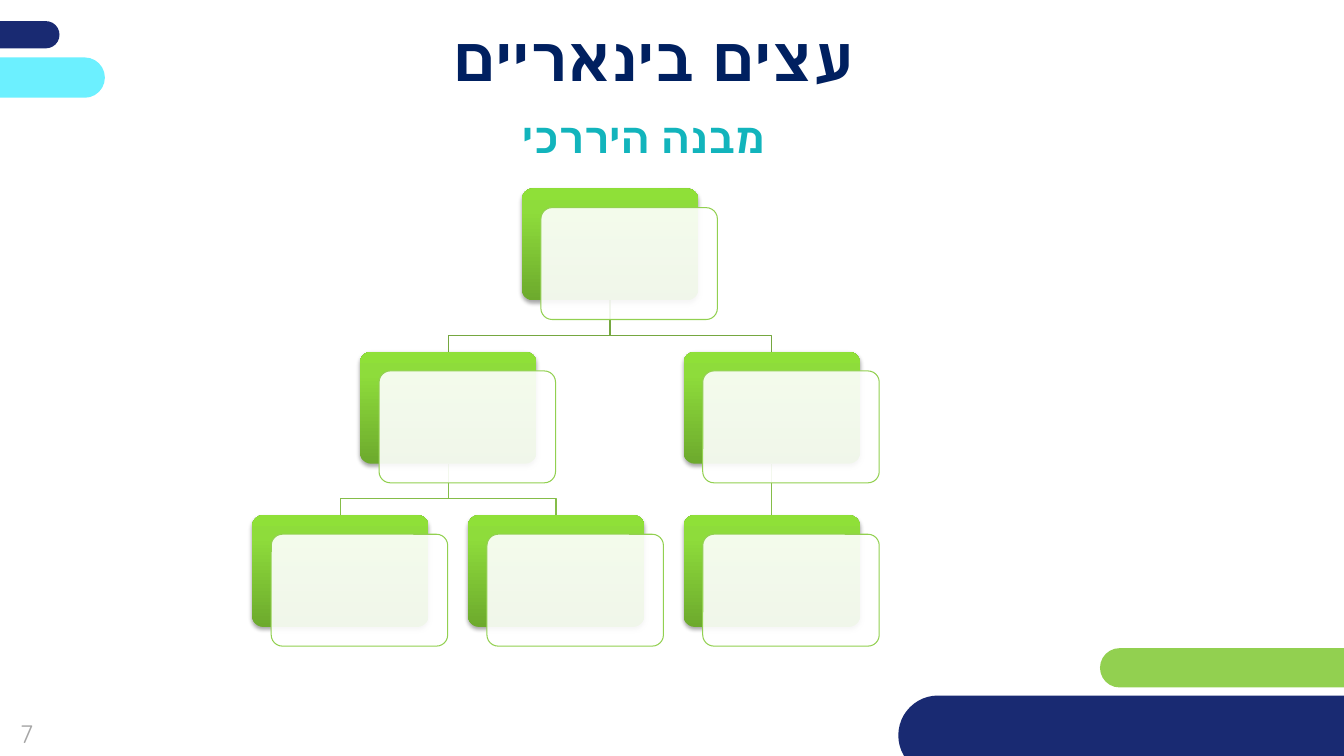
from copy import deepcopy

from lxml import etree
from pptx import Presentation, util as u
from pptx.dml.color import RGBColor
from pptx.enum import shapes, text
from pptx.oxml import ns

COLORS = {
    "navy": "192A72", "green": "92D050", "cyan": "6CF0FF", "white": "FFFFFF",
    "title": "002060", "subtitle": "12B4BC", "number": "A6A6A6",
    "root_link": "75A740", "child_link": "85BD49",
    "dark": "6DAA2D", "middle": "8EDC3B", "light": "8FE038",
}
COLORS = {name: RGBColor.from_string(value) for name, value in COLORS.items()}

deck = Presentation()
deck.slide_width, deck.slide_height = u.Inches(13.33), u.Inches(7.5)
page = deck.slides.add_slide(deck.slide_layouts[6])


def add_round_box(left, top, width, height, radius):
    box = page.shapes.add_shape(
        shapes.MSO_SHAPE.ROUNDED_RECTANGLE,
        u.Inches(left), u.Inches(top), u.Inches(width), u.Inches(height))
    box.adjustments[0] = radius
    box.shadow.inherit = False
    box.line.fill.background()
    return box


def add_label(words, left, top, width, height, size, color, bold):
    box = page.shapes.add_textbox(
        u.Inches(left), u.Inches(top), u.Inches(width), u.Inches(height))
    box.text_frame.word_wrap = True
    box.text_frame.vertical_anchor = text.MSO_ANCHOR.MIDDLE
    para = box.text_frame.paragraphs[0]
    para.text = words
    para.alignment = text.PP_ALIGN.CENTER
    span = para.runs[0]
    span.font.name = "Quicksand"
    span.font.size = u.Pt(size)
    span.font.bold = bold
    span.font.color.rgb = COLORS[color]
    return para


bars = [
    (-2.66, 0.21, 3.25, 0.27, "navy"),
    (10.91, 6.43, 5.21, 0.39, "green"),
    (-2.21, 0.57, 3.25, 0.4, "cyan"),
    (8.91, 6.9, 5.66, 0.79, "navy"),
]
for left, top, width, height, color in bars:
    bar = add_round_box(left, top, width, height, 0.5)
    bar.fill.solid()
    bar.fill.fore_color.rgb = COLORS[color]

add_label("7", -0.18, 6.99, 0.89, 0.57, 18, "number", False)
title = add_label("עצים בינאריים", 1.12, 0.17, 10.72, 0.79, 44, "title", True)
subtitle = add_label("מבנה היררכי", 1.12, 1.12, 10.72, 0.47, 30, "subtitle", True)
subtitle.space_before = u.Pt(6)
for para in (title, subtitle):
    para._p.get_or_add_pPr().set("rtl", "1")
subtitle._p.get_or_add_pPr().set("marL", str(u.Inches(0.2)))

NODE_WIDTH, NODE_HEIGHT = 1.75, 1.11
FIRST_LEFT, FIRST_TOP = 2.5, 1.87
COLUMN_STEP, ROW_STEP = 2.14, 1.62
CARD_SHIFT, ELBOW_RISE = 0.19, 0.16

tree = {
    "root": (1.25, 0), "left": (0.5, 1), "left first": (0, 2),
    "left second": (1, 2), "right": (2, 1), "right only": (2, 2),
}
nodes = {
    name: (FIRST_LEFT + column * COLUMN_STEP, FIRST_TOP + row * ROW_STEP)
    for name, (column, row) in tree.items()
}
links = [
    ("right", "right only"), ("root", "right"), ("left", "left second"),
    ("left", "left first"), ("root", "left"),
]
for parent, child in links:
    start_x, end_x = (u.Inches(nodes[name][0] + NODE_WIDTH / 2) for name in (parent, child))
    start_y = u.Inches(nodes[parent][1] + NODE_HEIGHT)
    end_y = u.Inches(nodes[child][1])
    if start_x == end_x:
        link = page.shapes.add_connector(
            shapes.MSO_CONNECTOR.STRAIGHT, start_x, start_y, end_x, end_y)
        etree.SubElement(link._element.spPr, ns.qn("a:effectLst"))
    else:
        elbow_y = end_y - u.Inches(ELBOW_RISE)
        outline = page.shapes.build_freeform(start_x, start_y)
        outline.add_line_segments(
            [(start_x, elbow_y), (end_x, elbow_y), (end_x, end_y)], close=False)
        link = outline.convert_to_shape()
        link.fill.background()
        link.shadow.inherit = False
    link.line.color.rgb = COLORS["root_link" if parent == "root" else "child_link"]
    link.line.width = u.Pt(0.75)

for left, top in nodes.values():
    back = add_round_box(left, top, NODE_WIDTH, NODE_HEIGHT, 0.1)
    back.fill.gradient()
    back.fill.gradient_angle = 90
    stop_list = back._element.spPr.find(".//" + ns.qn("a:gsLst"))
    stop_list.append(deepcopy(stop_list[-1]))
    stops = [(0, "dark"), (0.8, "middle"), (1, "light")]
    for stop, (position, color) in zip(back.fill.gradient_stops, stops):
        stop.position = position
        stop.color.rgb = COLORS[color]
    effects = back._element.spPr.find(ns.qn("a:effectLst"))
    shadow = etree.SubElement(
        effects, ns.qn("a:outerShdw"), blurRad=str(u.Pt(3.1)), dist=str(u.Pt(1.8)),
        dir="5400000", rotWithShape="0")
    shade = etree.SubElement(shadow, ns.qn("a:srgbClr"), val="000000")
    etree.SubElement(shade, ns.qn("a:alpha"), val="35000")

    card = add_round_box(
        left + CARD_SHIFT, top + CARD_SHIFT, NODE_WIDTH, NODE_HEIGHT, 0.1)
    card.fill.solid()
    card.fill.fore_color.rgb = COLORS["white"]
    tint = card._element.spPr.find(ns.qn("a:solidFill"))[0]
    etree.SubElement(tint, ns.qn("a:alpha"), val="90000")
    card.line.color.rgb = COLORS["green"]
    card.line.width = u.Pt(0.75)

deck.save("out.pptx")
